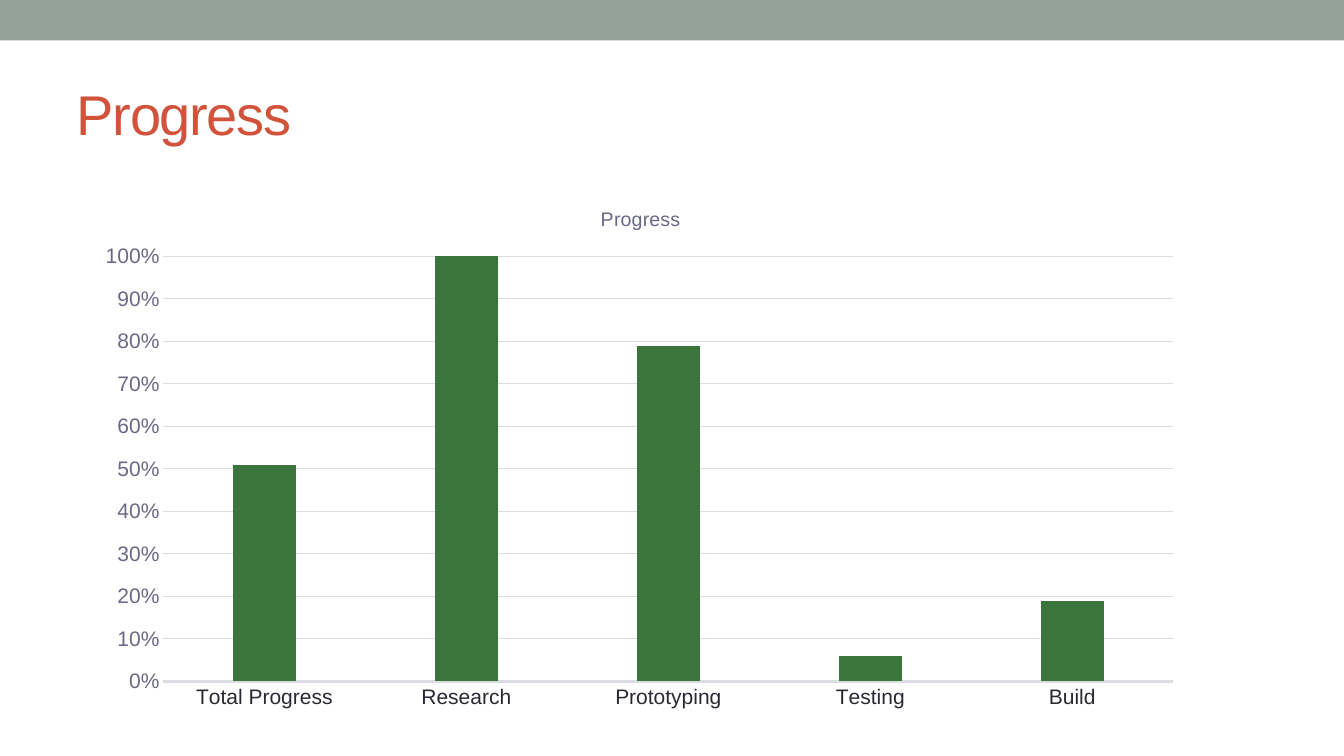
from lxml.etree import SubElement
from pptx import Presentation
from pptx.chart.data import CategoryChartData
from pptx.dml.color import RGBColor
from pptx.enum.chart import XL_CHART_TYPE as ChartType, XL_TICK_MARK as Tick
from pptx.enum.shapes import MSO_SHAPE as Shape
from pptx.enum.text import MSO_ANCHOR as Anchor
from pptx.oxml.ns import qn
from pptx.util import Cm, Pt

PROGRESS = {
    "Total Progress": 0.51,
    "Research": 1,
    "Prototyping": 0.79,
    "Testing": 0.06,
    "Build": 0.19,
}


def color(value):
    return RGBColor.from_string(value)


def style_font(font, size, fill, name="Arial", bold=False):
    font.name, font.size, font.bold = name, Pt(size), bold
    font.color.rgb = color(fill)


def write(tf, text, spacing=0, **style):
    """Put one run of formatted text, with letter spacing in points."""
    r = tf.paragraphs[0].add_run()
    r.text = text
    style_font(r.font, **style)
    if spacing:
        r.font._element.set("spc", str(spacing * 100))


def style_line(line, fill, width):
    line.color.rgb = color(fill)
    line.width = Pt(width)


def place_plot(chart, **fractions):
    """Fix the inner plot area as fractions of the chart frame."""
    area = chart._chartSpace.chart.plotArea
    layout = area.find(qn("c:layout"))
    if layout is None:
        layout = SubElement(area, qn("c:layout"))
        area.insert(0, layout)
    manual = SubElement(layout, qn("c:manualLayout"))
    settings = {"layoutTarget": "inner", "xMode": "edge", "yMode": "edge", **fractions}
    for tag, value in settings.items():
        SubElement(manual, qn(f"c:{tag}")).set("val", str(value))


class SlideBuilder:
    BAND, TITLE, BAR = "93A299", "D2533C", "3B753C"
    DARK, MUTED, GRID = "292934", "696986", "DCDCE3"

    def __init__(self, slide):
        self.shapes = slide.shapes

    def band(self, *box):
        sp = self.shapes.add_shape(Shape.RECTANGLE, *map(Cm, box))
        sp.shadow.inherit = False
        sp.fill.solid()
        sp.fill.fore_color.rgb = color(self.BAND)
        sp.line.fill.background()

    def title(self, text, *box):
        tf = self.shapes.add_textbox(*map(Cm, box)).text_frame
        tf.word_wrap = True
        tf.vertical_anchor = Anchor.MIDDLE
        write(tf, text, size=40, fill=self.TITLE, spacing=-1)

    def column_chart(self, title, values, *box):
        data = CategoryChartData(number_format="0%")
        data.categories = list(values)
        data.add_series("Series 1", list(values.values()))
        chart = self.shapes.add_chart(
            ChartType.COLUMN_CLUSTERED, *map(Cm, box), data).chart
        style_font(chart.font, 10, self.DARK)
        chart.has_legend = False
        chart.has_title = True
        write(chart.chart_title.text_frame, title, size=14, fill=self.MUTED)
        chart.chart_title.include_in_layout = False
        place_plot(chart, x=0.07, y=0.13, w=0.91, h=0.8)

        plot = chart.plots[0]
        plot.gap_width, plot.overlap = 219, -27
        plot.vary_by_categories = False
        bars = plot.series[0].format.fill
        bars.solid()
        bars.fore_color.rgb = color(self.BAR)
        self.axes(chart.category_axis, chart.value_axis)

    def axes(self, cat, val):
        for axis, fill in ((cat, self.DARK), (val, self.MUTED)):
            axis.major_tick_mark = axis.minor_tick_mark = Tick.NONE
            style_font(axis.tick_labels.font, 15, fill)
        style_line(cat.format.line, self.GRID, 2)
        val.format.line.fill.background()
        val.minimum_scale, val.maximum_scale, val.major_unit = 0, 1, 0.1
        val.tick_labels.number_format = "0%"
        val.tick_labels.number_format_is_linked = False
        val.has_major_gridlines = True
        style_line(val.major_gridlines.format.line, self.GRID, 0.75)


def main():
    prs = Presentation()
    prs.slide_width, prs.slide_height = Cm(33.87), Cm(19.05)
    s = SlideBuilder(prs.slides.add_slide(prs.slide_layouts[6]))
    s.band(0, 0, 33.87, 1.02)
    s.title("Progress", 1.69, 1.48, 30.48, 2.74)
    s.column_chart("Progress", PROGRESS, 2.16, 4.72, 27.97, 13.39)
    prs.save("out.pptx")


if __name__ == "__main__":
    main()
